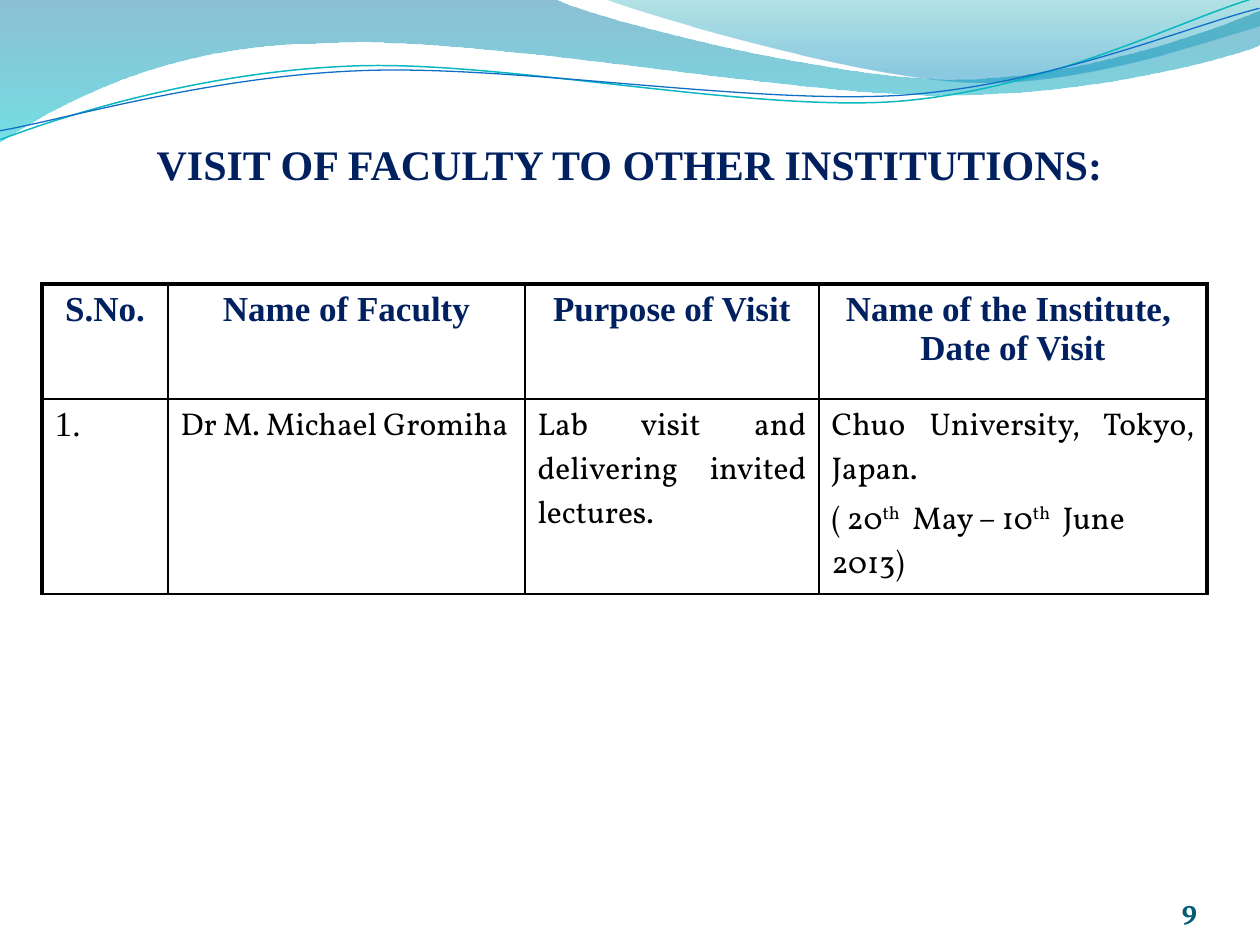
from lxml import etree
from pptx import Presentation
from pptx.dml.color import RGBColor
from pptx.enum.text import MSO_ANCHOR, PP_ALIGN
from pptx.oxml.ns import qn
from pptx.util import Emu, Pt

PX = 914400 / 126
LEFT, CENTER, RIGHT, JUSTIFY = PP_ALIGN.LEFT, PP_ALIGN.CENTER, PP_ALIGN.RIGHT, PP_ALIGN.JUSTIFY
BOTTOM = MSO_ANCHOR.BOTTOM
COLORS = {
    "navy": "002060", "black": "000000", "number": "045D75",
    "deep": "0074A1", "cyan": "00C6CF", "teal": "00A1A9", "sky": "008BBF",
    "teal_line": "0AB8BF", "blue_line": "0F6FC6",
}
SERIF, BODY = "Times New Roman", "Vollkorn"
TITLE = {"name": SERIF, "size": 24, "bold": True, "color": "navy"}
HEADER = {"name": SERIF, "size": 20, "bold": True, "color": "navy"}
SERIAL = {"name": SERIF, "size": 20, "bold": False, "color": "black"}
ENTRY = {"name": BODY, "size": 18, "bold": False, "color": "black"}
NUMBER = {"name": BODY, "size": 16, "bold": True, "color": "number"}

# Outlines: a start point, then lines (2 numbers) and Bezier curves (6 numbers).
# Gradients: position, colour, opacity in percent.
BANDS = [
    ([(0, -1), (554, -1), (600, 21, 837, 79, 955, 79), (1075, 79, 1207, 33, 1260, 11),
      (1261, 45), (1239, 55, 1096, 96, 940, 95), (784, 95, 481, 35, 324, 43),
      (163, 44, 58, 105, -1, 142)],
     [(0, "deep", 45), (1, "cyan", 55)]),
    ([(604, -1), (641, 14, 859, 78, 969, 82), (1079, 87, 1211, 40, 1260, 26), (1260, 0)],
     [(0, "teal", 30), (0.8, "sky", 45)]),
]
STRAND_TILT = -2.7
STRANDS = [
    ([(-2, 110), (59, 90, 199, 52, 350, 53), (499, 53, 745, 118, 896, 114),
      (1049, 109, 1184, 45, 1260, 27)], "teal_line", 0.85),
    ([(-2, 101), (57, 94, 207, 57, 357, 58), (509, 58, 750, 111, 902, 108),
      (1052, 104, 1188, 53, 1262, 38)], "blue_line", 0.75),
]

COLUMNS = [126, 357, 294, 388]
ROWS = [115, 195]
# Each cell: format, then paragraphs of (alignment, runs); "^" marks a superscript.
CELLS = [
    [(HEADER, [(CENTER, ["S.No."])]),
     (HEADER, [(CENTER, ["Name of Faculty"])]),
     (HEADER, [(CENTER, ["Purpose of Visit"])]),
     (HEADER, [(CENTER, ["Name of the Institute, ", "\n", "Date of Visit"])])],
    [(SERIAL, [(LEFT, ["1."])]),
     (ENTRY, [(LEFT, ["Dr M. Michael Gromiha"])]),
     (ENTRY, [(JUSTIFY, ["Lab visit and delivering invited lectures."])]),
     (ENTRY, [(JUSTIFY, ["Chuo University, Tokyo, Japan. "]),
              (LEFT, ["( 20", "^th", "  May – 10", "^th", "  June 2013)"])])],
]


def px(n):
    return Emu(round(n * PX))


def rgb(name):
    return RGBColor.from_string(COLORS[name])


def write(p, runs, fmt, align):
    p.alignment = align
    for text in runs:
        if text == "\n":
            p.add_line_break()
            continue
        r = p.add_run()
        r.text = text.lstrip("^")
        for key in ("name", "bold"):
            setattr(r.font, key, fmt[key])
        r.font.size = Pt(fmt["size"])
        r.font.color.rgb = rgb(fmt["color"])
        if text.startswith("^"):
            r.font._element.set("baseline", "30000")


def add_outline(s, outline, x, y, close):
    """Build a freeform through all points, then turn each curve's three lines into a Bezier."""
    points = [(px(x + seg[i]), px(y + seg[i + 1]))
              for seg in outline for i in range(0, len(seg), 2)]
    builder = s.shapes.build_freeform(*points[0], scale=1.0)
    builder.add_line_segments(points[1:], close=close)
    sp = builder.convert_to_shape()
    sp.shadow.inherit = False
    lines = iter(list(sp._element.iter(qn("a:lnTo"))))
    for seg in outline[1:]:
        first = next(lines)
        if len(seg) == 6:
            first.tag = qn("a:cubicBezTo")
            for _ in range(2):
                line = next(lines)
                first.append(line[0])
                line.getparent().remove(line)
    return sp


def add_waves(s, x, y):
    for outline, stops in BANDS:
        sp = add_outline(s, outline, x, y, True)
        sp.line.fill.background()
        sp.fill.gradient()
        sp.fill.gradient_angle = 270
        for stop, (position, color, opacity) in zip(sp.fill.gradient_stops, stops):
            stop.position = position
            stop.color.rgb = rgb(color)
            clr = stop._gs.find(qn("a:srgbClr"))
            etree.SubElement(clr, qn("a:alpha"), val=str(opacity * 1000))
    for outline, color, width in STRANDS:
        sp = add_outline(s, outline, x, y, False)
        sp.rotation = STRAND_TILT
        sp.fill.background()
        sp.line.color.rgb = rgb(color)
        sp.line.width = Pt(width)


def add_text(s, x, y, w, h, text, fmt, align, inset_top=0):
    tf = s.shapes.add_textbox(px(x), px(y), px(w), px(h)).text_frame
    tf.word_wrap = True
    tf.vertical_anchor = BOTTOM
    tf.margin_left = tf.margin_right = tf.margin_bottom = 0
    tf.margin_top = px(inset_top)
    write(tf.paragraphs[0], [text], fmt, align)


def set_borders(cell, widths):
    """Draw the left, right, top and bottom borders, in points."""
    tc_pr = cell._tc.get_or_add_tcPr()
    for i, (side, width) in enumerate(zip("LRTB", widths)):
        ln = etree.Element(qn("a:ln" + side), w=str(Pt(width)))
        fill = etree.SubElement(ln, qn("a:solidFill"))
        etree.SubElement(fill, qn("a:srgbClr"), val=COLORS["black"])
        tc_pr.insert(i, ln)


def add_visits(s, x, y):
    frame = s.shapes.add_table(len(ROWS), len(COLUMNS), px(x), px(y),
                               px(sum(COLUMNS)), px(sum(ROWS)))
    table = frame.table
    for column, w in zip(table.columns, COLUMNS):
        column.width = px(w)
    for row, h in zip(table.rows, ROWS):
        row.height = px(h)
    thin, thick = 1, 2.25
    for i, row in enumerate(CELLS):
        for j, (fmt, paragraphs) in enumerate(row):
            cell = table.cell(i, j)
            cell.fill.background()
            set_borders(cell, [thick if j == 0 else thin,
                               thick if j == len(COLUMNS) - 1 else thin,
                               thick if i == 0 else thin, thin])
            tf = cell.text_frame
            for k, (align, runs) in enumerate(paragraphs):
                p = tf.add_paragraph() if k else tf.paragraphs[0]
                p.space_before = Pt(fmt["size"] * 0.2)
                write(p, runs, fmt, align)


def main():
    prs = Presentation()
    prs.slide_width, prs.slide_height = px(1260), px(945)
    s = prs.slides.add_slide(prs.slide_layouts[6])
    add_waves(s, 0, 0)
    add_text(s, 94, 32, 1071, 157, "VISIT OF FACULTY TO OTHER INSTITUTIONS:",
             TITLE, CENTER, inset_top=6)
    add_visits(s, 42, 284)
    add_text(s, 1092, 876, 105, 50, "9", NUMBER, RIGHT)
    prs.save("out.pptx")


if __name__ == "__main__":
    main()
